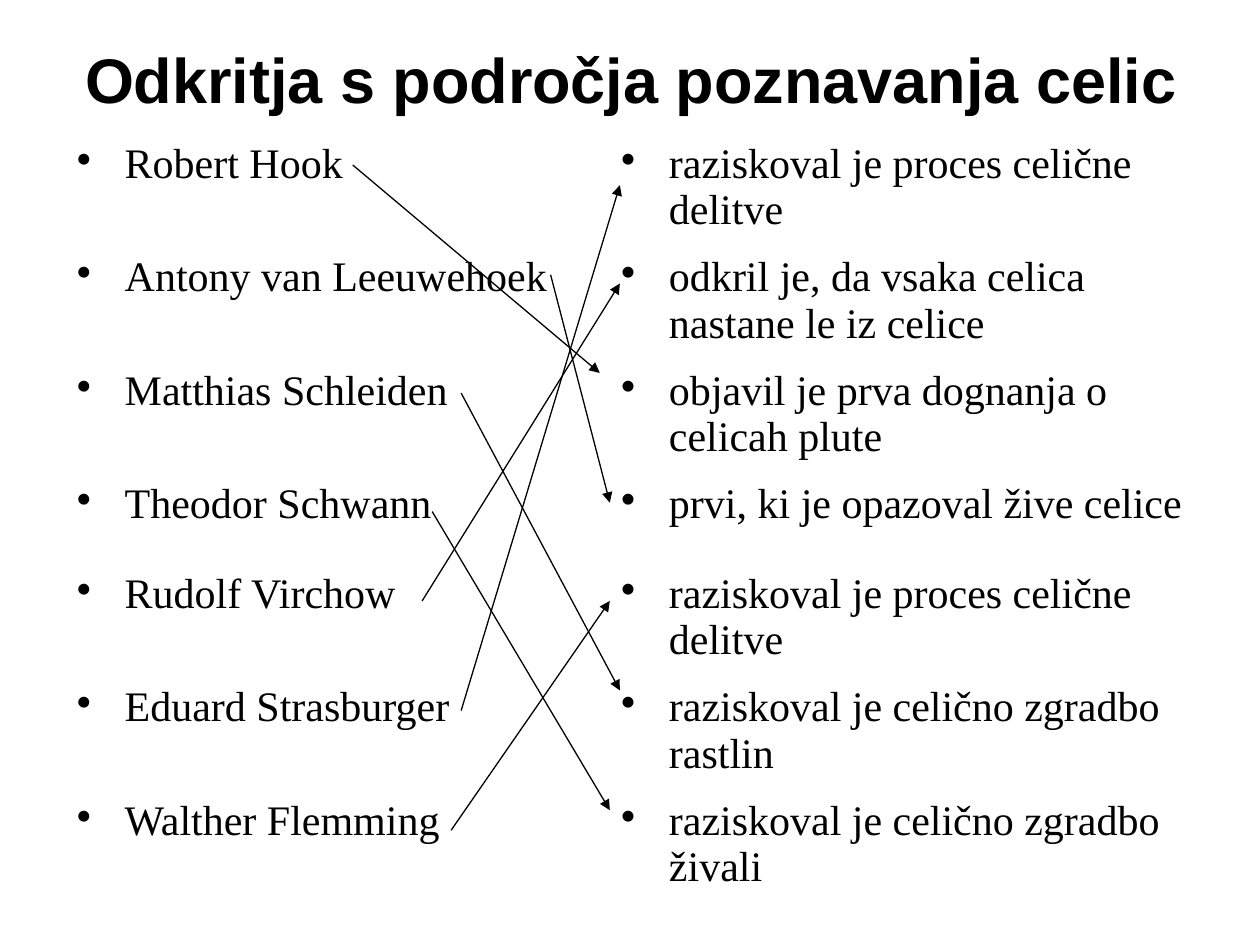
import pptx
import pptx.dml.color
import pptx.enum.shapes
import pptx.enum.text
import pptx.oxml.ns
import pptx.util
from lxml import etree
from dataclasses import dataclass

PX = 9144  # EMU per px, 100 px to the inch


@dataclass(frozen=True)
class Theme:
    ink: str = "000000"
    paper: str = "FFFFFF"
    title_font: str = "Arial"
    body_font: str = "Times New Roman"
    title_size: int = 36
    body_size: int = 24
    line_width: float = 0.75


def px(length):
    return pptx.util.Emu(length * PX)


def rgb(value):
    return pptx.dml.color.RGBColor.from_string(value)


def add_xml(parent, tag, **attributes):
    return etree.SubElement(parent, pptx.oxml.ns.qn(tag), attributes)


class SlideBuilder:
    def __init__(self, slide, theme):
        self.slide = slide
        self.theme = theme
        fill = slide.background.fill
        fill.solid()
        fill.fore_color.rgb = rgb(theme.paper)

    def style(self, paragraph, **values):
        for name, value in values.items():
            setattr(paragraph.font, name, value)
        paragraph.font.color.rgb = rgb(self.theme.ink)

    def title(self, text, left, top, width, height):
        frame = self.slide.shapes.add_textbox(
            px(left), px(top), px(width), px(height)).text_frame
        frame.word_wrap = True
        frame.vertical_anchor = pptx.enum.text.MSO_ANCHOR.MIDDLE
        heading = frame.paragraphs[0]
        heading.text = text
        heading.alignment = pptx.enum.text.PP_ALIGN.CENTER
        self.style(heading, name=self.theme.title_font,
                   size=pptx.util.Pt(self.theme.title_size), bold=True)

    def bullet(self, paragraph, text, tab, indent=38):
        paragraph.text = text
        properties = paragraph._p.get_or_add_pPr()
        properties.set("marL", str(px(indent)))
        properties.set("indent", str(-px(indent)))
        add_xml(properties, "a:buChar", char="•")
        tabs = add_xml(properties, "a:tabLst")
        add_xml(tabs, "a:tab", pos=str(px(tab)), algn="l")
        self.style(paragraph, name=self.theme.body_font,
                   size=pptx.util.Pt(self.theme.body_size), bold=False)

    def table(self, rows, left, top, widths, heights, tabs):
        table = self.slide.shapes.add_table(
            len(rows), len(widths), px(left), px(top),
            px(sum(widths)), px(sum(heights))).table
        table.first_row = table.horz_banding = False
        for column, width in zip(table.columns, widths):
            column.width = px(width)
        for row, height, texts in zip(table.rows, heights, rows):
            row.height = px(height)
            for cell, text, tab in zip(row.cells, texts, tabs):
                cell.fill.background()
                self.bullet(cell.text_frame.paragraphs[0], text, tab)

    def arrow(self, start, end):
        connector = self.slide.shapes.add_connector(
            pptx.enum.shapes.MSO_CONNECTOR.STRAIGHT,
            *(px(value) for value in start + end))
        connector.line.color.rgb = rgb(self.theme.ink)
        connector.line.width = pptx.util.Pt(self.theme.line_width)
        add_xml(connector.line._get_or_add_ln(), "a:tailEnd", type="triangle")
        add_xml(connector._element.spPr, "a:effectLst")


DISCOVERIES = [
    ("Robert Hook", "raziskoval je proces celične delitve"),
    ("Antony van Leeuwehoek", "odkril je, da vsaka celica nastane le iz celice"),
    ("Matthias Schleiden", "objavil je prva dognanja o celicah plute"),
    ("Theodor Schwann", "prvi, ki je opazoval žive celice"),
    ("Rudolf Virchow", "raziskoval je proces celične delitve"),
    ("Eduard Strasburger", "raziskoval je celično zgradbo rastlin"),
    ("Walther Flemming", "raziskoval je celično zgradbo živali"),
]

# From each scientist to the matching discovery
MATCHES = [
    ((280, 131), (476, 296)),
    ((437, 218), (484, 399)),
    ((366, 312), (492, 548)),
    ((343, 406), (484, 643)),
    ((335, 477), (492, 225)),
    ((366, 564), (492, 147)),
    ((358, 659), (484, 477)),
]


def main():
    presentation = pptx.Presentation()
    presentation.slide_width, presentation.slide_height = px(1000), px(750)
    slide = presentation.slides.add_slide(presentation.slide_layouts[6])
    builder = SlideBuilder(slide, Theme())

    # Heading
    builder.title("Odkritja s področja poznavanja celic", 51, 0, 900, 125)

    # Scientists and discoveries; the one-line row is lower
    heights = [90] * len(DISCOVERIES)
    heights[3] = 71
    builder.table(DISCOVERIES, 51, 107, (432, 468), heights, tabs=(12, 18))

    # Matching arrows
    for scientist, discovery in MATCHES:
        builder.arrow(scientist, discovery)

    presentation.save("out.pptx")


if __name__ == "__main__":
    main()
